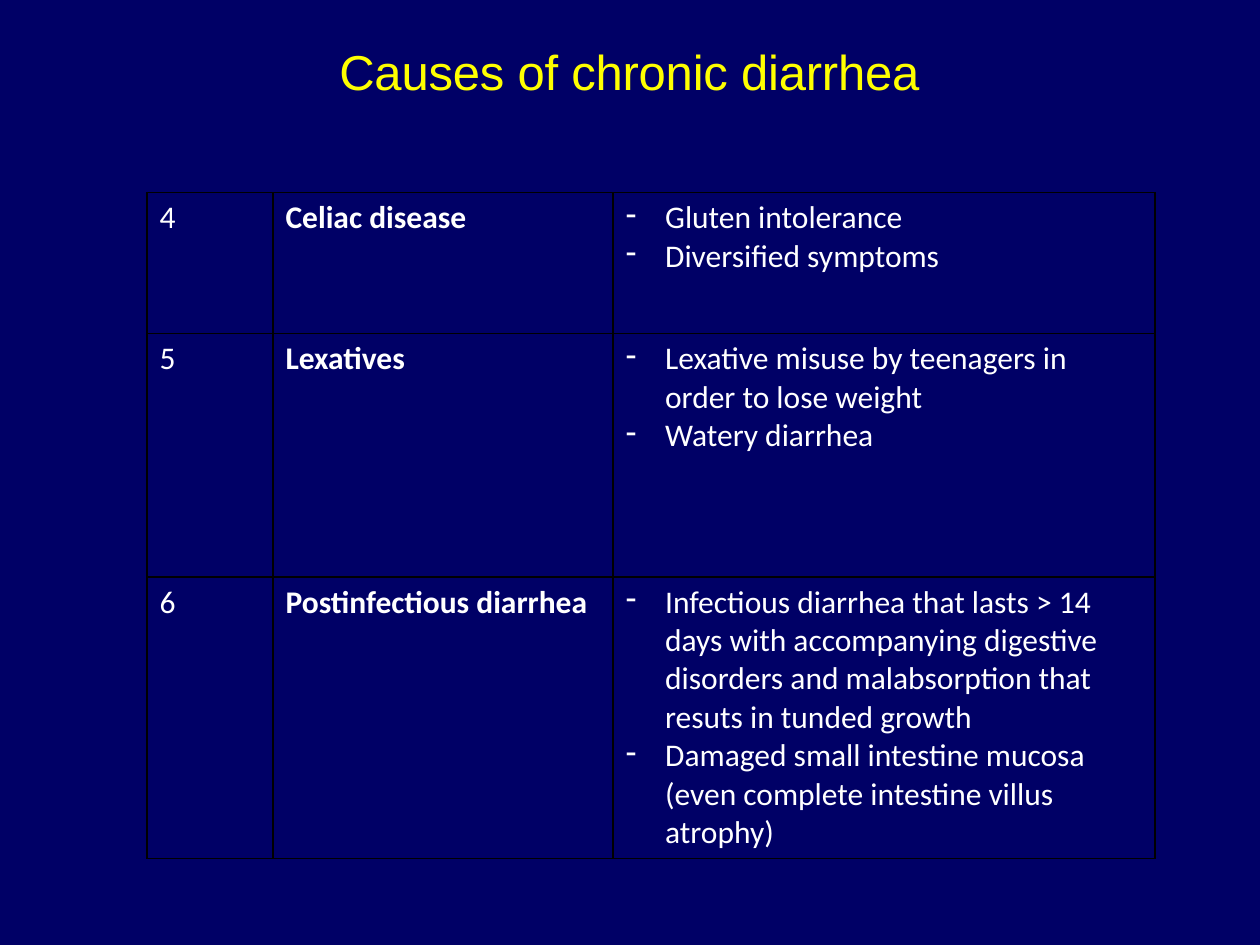
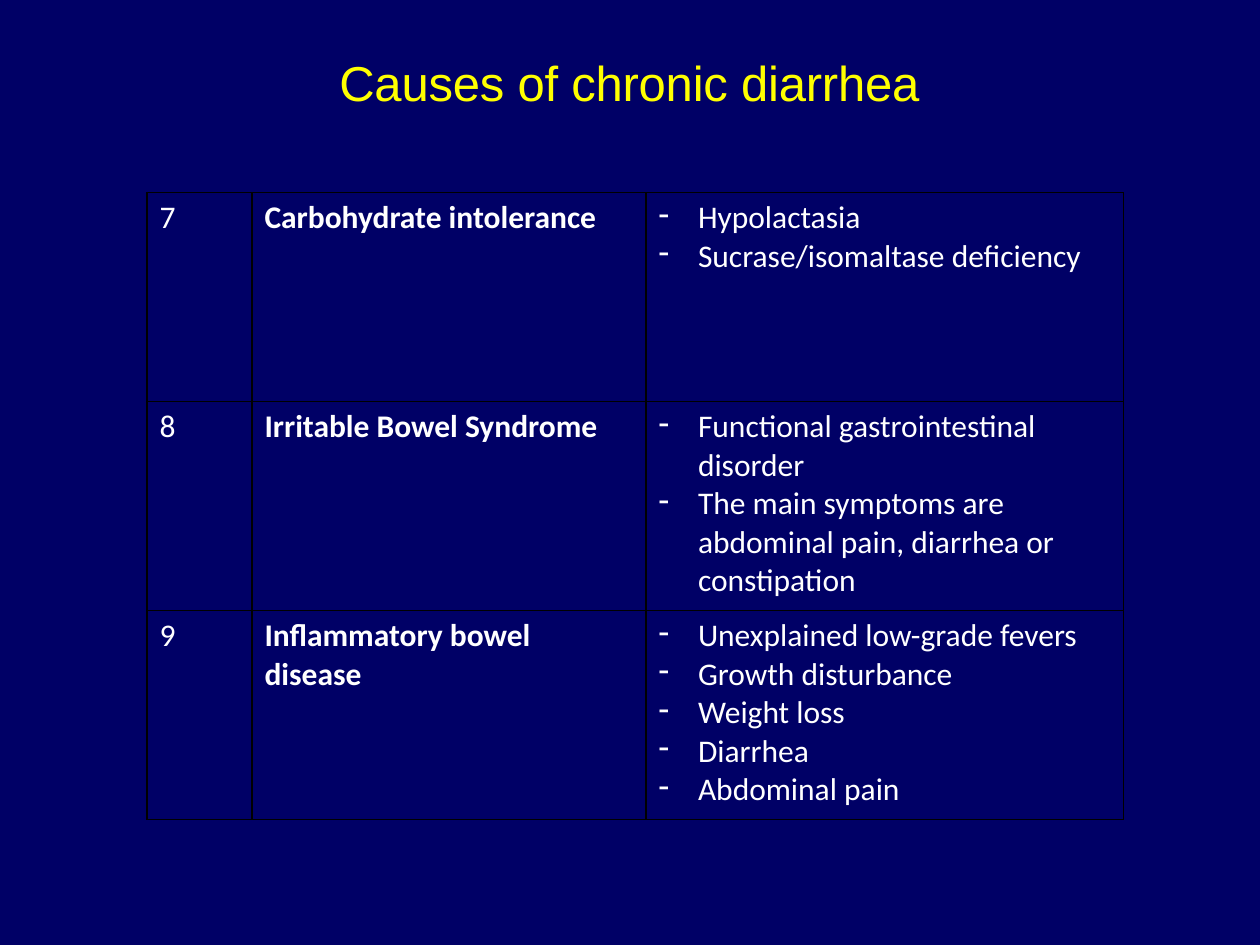
from dataclasses import dataclass

from lxml import etree
from pptx import Presentation
from pptx.dml.color import RGBColor
from pptx.enum import text
from pptx.oxml import ns
from pptx.util import Pt


@dataclass(frozen=True)
class Theme:
    background: RGBColor = RGBColor(0x00, 0x00, 0x66)
    title: RGBColor = RGBColor(0xFF, 0xFF, 0x00)
    body: RGBColor = RGBColor(0xFF, 0xFF, 0xFF)
    border: RGBColor = RGBColor(0x00, 0x00, 0x00)
    title_font: str = "Arial"
    body_font: str = "Calibri"
    title_size: float = 28
    body_size: float = 18
    border_width: float = 1
    bullet_indent: float = 22.5


THEME = Theme()
TITLE = "Causes of chronic diarrhea"
TABLE_LEFT, TABLE_TOP = 84, 110

SLIDES = [
    {
        "title_box": (127.4, 23.8, 464.4, 33.8),
        "columns": (72, 194.4, 309.6),
        "rows": (80.6, 139, 161),
        "causes": [
            ("4", "Celiac disease", ["Gluten intolerance", "Diversified symptoms"]),
            ("5", "Lexatives", [
                "Lexative misuse by teenagers in order to lose weight",
                "Watery diarrhea",
            ]),
            ("6", "Postinfectious diarrhea", [
                "Infectious diarrhea that lasts > 14 days with accompanying digestive "
                "disorders and malabsorption that resuts in tunded growth",
                "Damaged small intestine mucosa (even complete intestine villus atrophy)",
            ]),
        ],
    },
    {
        "title_box": (127.4, 30.2, 464.4, 33.8),
        "columns": (60, 225.2, 272.8),
        "rows": (119.4,) * 3,
        "causes": [
            ("7", "Carbohydrate intolerance", [
                "Hypolactasia",
                "Sucrase/isomaltase deficiency",
            ]),
            ("8", "Irritable Bowel Syndrome", [
                "Functional gastrointestinal disorder",
                "The main symptoms are abdominal pain, diarrhea or constipation",
            ]),
            ("9", "Inflammatory bowel disease", [
                "Unexplained low-grade fevers",
                "Growth disturbance",
                "Weight loss",
                "Diarrhea",
                "Abdominal pain",
            ]),
        ],
    },
]


def format_run(r, font, size, color, bold=False):
    r.font.name = font
    r.font.size = Pt(size)
    r.font.color.rgb = color
    r.font.bold = bold


def add_title(s, box):
    sp = s.shapes.title
    sp.left, sp.top, sp.width, sp.height = map(Pt, box)
    tf = sp.text_frame
    tf.margin_left = tf.margin_top = tf.margin_right = tf.margin_bottom = 0
    tf.vertical_anchor = text.MSO_ANCHOR.TOP
    tf.auto_size = text.MSO_AUTO_SIZE.SHAPE_TO_FIT_TEXT
    tf.text = TITLE
    p = tf.paragraphs[0]
    p.alignment = text.PP_ALIGN.CENTER
    r = p.runs[0]
    format_run(r, THEME.title_font, THEME.title_size, THEME.title)
    r.font._element.set("spc", "-10")


def add_bullet(p):
    pPr = p._p.get_or_add_pPr()
    pPr.set("marL", str(Pt(THEME.bullet_indent)))
    pPr.set("indent", str(-Pt(THEME.bullet_indent)))
    etree.SubElement(pPr, ns.qn("a:buChar"), char="-")


def add_borders(cell):
    tcPr = cell._tc.get_or_add_tcPr()
    for i, side in enumerate(("lnL", "lnR", "lnT", "lnB")):
        ln = etree.Element(ns.qn(f"a:{side}"), w=str(Pt(THEME.border_width)))
        fill = etree.SubElement(ln, ns.qn("a:solidFill"))
        etree.SubElement(fill, ns.qn("a:srgbClr"), val=str(THEME.border))
        tcPr.insert(i, ln)


def fill_cell(cell, lines, bold=False, bulleted=False):
    cell.fill.background()
    add_borders(cell)
    tf = cell.text_frame
    tf.text = "\n".join(lines)
    for p in tf.paragraphs:
        if bulleted:
            add_bullet(p)
        format_run(p.runs[0], THEME.body_font, THEME.body_size, THEME.body, bold)


def add_causes_table(s, left, top, columns, rows, causes):
    frame = s.shapes.add_table(len(rows), len(columns), Pt(left), Pt(top),
                               Pt(sum(columns)), Pt(sum(rows)))
    table = frame.table
    table.first_row = table.horz_banding = False
    for column, width in zip(table.columns, columns):
        column.width = Pt(width)
    for row, height, (number, cause, features) in zip(table.rows, rows, causes):
        row.height = Pt(height)
        number_cell, cause_cell, features_cell = row.cells
        fill_cell(number_cell, [number])
        fill_cell(cause_cell, [cause], bold=True)
        fill_cell(features_cell, features, bulleted=True)


def add_causes_slide(prs, title_box, columns, rows, causes):
    s = prs.slides.add_slide(prs.slide_layouts[5])
    add_title(s, title_box)
    add_causes_table(s, TABLE_LEFT, TABLE_TOP, columns, rows, causes)


def main():
    prs = Presentation()
    prs.slide_width, prs.slide_height = Pt(720), Pt(540)
    fill = prs.slide_master.background.fill
    fill.solid()
    fill.fore_color.rgb = THEME.background
    for content in SLIDES:
        add_causes_slide(prs, **content)
    prs.save("out.pptx")


if __name__ == "__main__":
    main()
